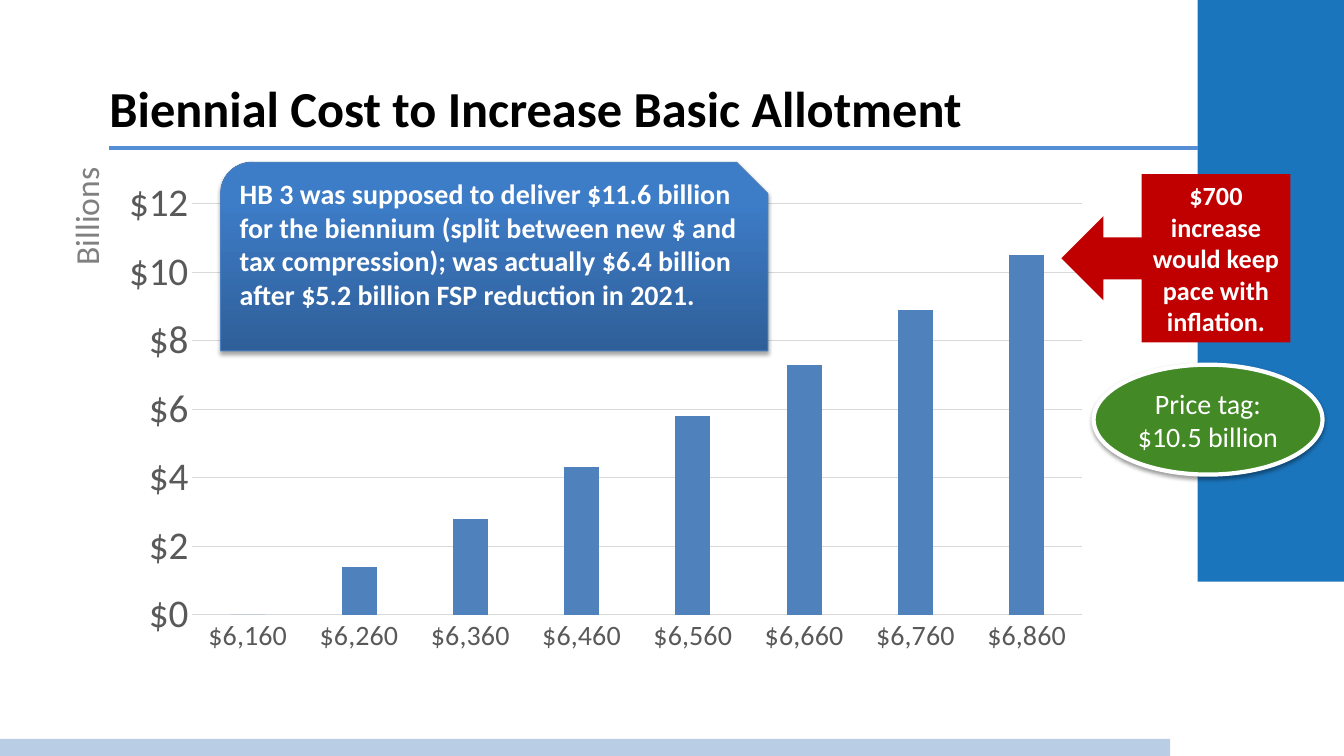
from dataclasses import dataclass

from lxml import etree
from pptx import Presentation
from pptx import util as u
from pptx.chart.data import CategoryChartData
from pptx.dml.color import RGBColor
from pptx.enum import chart as ch, shapes, text
from pptx.oxml import parse_xml
from pptx.oxml.ns import nsdecls, qn

Cm, Pt = u.Cm, u.Pt


@dataclass(frozen=True)
class Theme:
    font: str = "Calibri"
    black: str = "000000"
    white: str = "FFFFFF"
    band: str = "1B75BC"
    strip: str = "B9CDE5"
    rule: str = "558ED5"
    unit: str = "808080"
    axis: str = "595959"
    grid: str = "D9D9D9"
    column: str = "4F81BD"
    alert: str = "C00000"
    price: str = "438A26"
    note_line: str = "4B7EBC"
    note_stops: tuple = ((0, "2F5F99"), (0.8, "3D7CC7"))
    title_size: float = 36
    tick_size: float = 28
    unit_size: float = 24
    body_size: float = 20
    alert_size: float = 18.7


THEME = Theme()


def rgb(colour):
    return RGBColor.from_string(colour)


def format_font(font, size, colour, bold=False):
    values = {"name": THEME.font, "size": Pt(size), "bold": bold}
    for name, value in values.items():
        setattr(font, name, value)
    font.color.rgb = rgb(colour)


def format_line(line, colour, width):
    line.color.rgb = rgb(colour)
    line.width = Pt(width)


def write(shape, words, size, colour, bold=False, align=text.PP_ALIGN.LEFT,
          anchor=text.MSO_ANCHOR.MIDDLE):
    frame = shape.text_frame
    frame.word_wrap = True
    frame.vertical_anchor = anchor
    paragraph = frame.paragraphs[0]
    paragraph.alignment = align
    run = paragraph.add_run()
    run.text = words
    format_font(run.font, size, colour, bold)


def add_label(slide, box, words, size, colour, **style):
    label = slide.shapes.add_textbox(*map(Cm, box))
    write(label, words, size, colour, **style)
    return label


def add_block(slide, preset, box, fill=None, line=None):
    """Add a preset shape; line is a (colour, width) pair or None."""
    block = slide.shapes.add_shape(preset, *map(Cm, box))
    block.shadow.inherit = False
    if fill:
        block.fill.solid()
        block.fill.fore_color.rgb = rgb(fill)
    if line:
        format_line(block.line, *line)
    else:
        block.line.fill.background()
    return block


def fill_gradient(shape, stops, angle):
    shape.fill.gradient()
    shape.fill.gradient_angle = angle
    for stop, (position, colour) in zip(shape.fill.gradient_stops, stops):
        stop.position = position
        stop.color.rgb = rgb(colour)


def drop_shadow(shape, blur, distance, opacity):
    effects = shape._element.spPr.find(qn("a:effectLst"))
    effects.append(parse_xml(
        f'<a:outerShdw {nsdecls("a")} blurRad="{Pt(blur)}" dist="{Pt(distance)}" '
        f'dir="5400000" rotWithShape="0"><a:srgbClr val="{THEME.black}">'
        f'<a:alpha val="{opacity * 1000}"/></a:srgbClr></a:outerShdw>'))


def add_rule(slide, left, right, y):
    rule = slide.shapes.add_connector(
        shapes.MSO_CONNECTOR.STRAIGHT, Cm(left), Cm(y), Cm(right), Cm(y))
    format_line(rule.line, THEME.rule, 2.25)
    etree.SubElement(rule._element.spPr, qn("a:effectLst"))


def set_plot_area(chart, **fractions):
    """Fix the inner plot area as fractions of the chart frame."""
    plot_area = chart._chartSpace.chart.plotArea
    for old in plot_area.findall(qn("c:layout")):
        plot_area.remove(old)
    parts = "".join(f'<c:{key} val="{value}"/>' for key, value in fractions.items())
    plot_area.insert(0, parse_xml(
        f'<c:layout {nsdecls("c")}><c:manualLayout><c:layoutTarget val="inner"/>'
        f'<c:xMode val="edge"/><c:yMode val="edge"/>{parts}'
        f'</c:manualLayout></c:layout>'))


def add_cost_chart(slide, box):
    costs = CategoryChartData(number_format='"$"#,##0.0')
    costs.categories = [f"${allotment:,}" for allotment in range(6160, 6861, 100)]
    costs.add_series("Series 1", (0, 1.4, 2.8, 4.3, 5.8, 7.3, 8.9, 10.5))
    chart = slide.shapes.add_chart(
        ch.XL_CHART_TYPE.COLUMN_CLUSTERED, *map(Cm, box), costs).chart
    chart.has_legend = chart.has_title = False
    format_font(chart.font, 10, THEME.black)
    set_plot_area(chart, x=0.084, y=0.068, w=0.896, h=0.834)

    plot = chart.plots[0]
    for name, value in {"gap_width": 219, "overlap": -27,
                        "vary_by_categories": False}.items():
        setattr(plot, name, value)
    columns = plot.series[0].format.fill
    columns.solid()
    columns.fore_color.rgb = rgb(THEME.column)

    allotments, billions = chart.category_axis, chart.value_axis
    for axis, size in ((allotments, THEME.body_size), (billions, THEME.tick_size)):
        axis.major_tick_mark = axis.minor_tick_mark = ch.XL_TICK_MARK.NONE
        format_font(axis.tick_labels.font, size, THEME.axis)
    format_line(allotments.format.line, THEME.grid, 0.75)
    billions.format.line.fill.background()
    for name, value in {"minimum_scale": 0, "maximum_scale": 12, "major_unit": 2,
                        "has_major_gridlines": True}.items():
        setattr(billions, name, value)
    format_line(billions.major_gridlines.format.line, THEME.grid, 0.75)
    billions.tick_labels.number_format = '"$"#,##0'
    billions.tick_labels.number_format_is_linked = False


def main():
    deck = Presentation()
    deck.slide_width, deck.slide_height = Cm(33.87), Cm(19.05)
    slide = deck.slides.add_slide(deck.slide_layouts[6])
    preset = shapes.MSO_SHAPE
    centre = text.PP_ALIGN.CENTER

    add_block(slide, preset.RECTANGLE, (30.18, 0, 3.69, 14.66), THEME.band)
    add_block(slide, preset.RECTANGLE, (0, 18.62, 29.49, 0.43), THEME.strip)
    add_rule(slide, 2.74, 30.2, 3.73)
    add_label(slide, (2.51, 1.65, 23.47, 2.11),
              "Biennial Cost to Increase Basic Allotment",
              THEME.title_size, THEME.black, bold=True)

    add_cost_chart(slide, (2.74, 4.29, 25.04, 12.42))
    unit = add_label(slide, (0.05, 4.19, 4.22, 1.27), "Billions",
                     THEME.unit_size, THEME.unit)
    unit.rotation = 270

    inflation = add_block(slide, preset.LEFT_ARROW_CALLOUT,
                          (26.75, 4.39, 5.77, 4.24), THEME.alert)
    write(inflation, "$700 increase would keep pace with inflation.",
          THEME.alert_size, THEME.white, bold=True, align=centre)

    promise = add_block(slide, preset.SNIP_ROUND_RECTANGLE,
                        (5.56, 4.09, 13.79, 4.75), line=(THEME.note_line, 0.75))
    fill_gradient(promise, THEME.note_stops, 90)
    drop_shadow(promise, 3.1, 1.8, 35)
    write(promise, "HB 3 was supposed to deliver $11.6 billion for the biennium "
          "(split between new $ and tax compression); was actually $6.4 billion "
          "after $5.2 billion FSP reduction in 2021.",
          THEME.body_size, THEME.white, bold=True, anchor=text.MSO_ANCHOR.TOP)

    price_tag = add_block(slide, preset.OVAL, (27.56, 9.19, 5.77, 2.77),
                          THEME.price, (THEME.white, 3))
    drop_shadow(price_tag, 3.1, 1.6, 38)
    write(price_tag, "Price tag: $10.5 billion", THEME.body_size, THEME.white,
          align=centre)

    deck.save("out.pptx")


if __name__ == "__main__":
    main()
